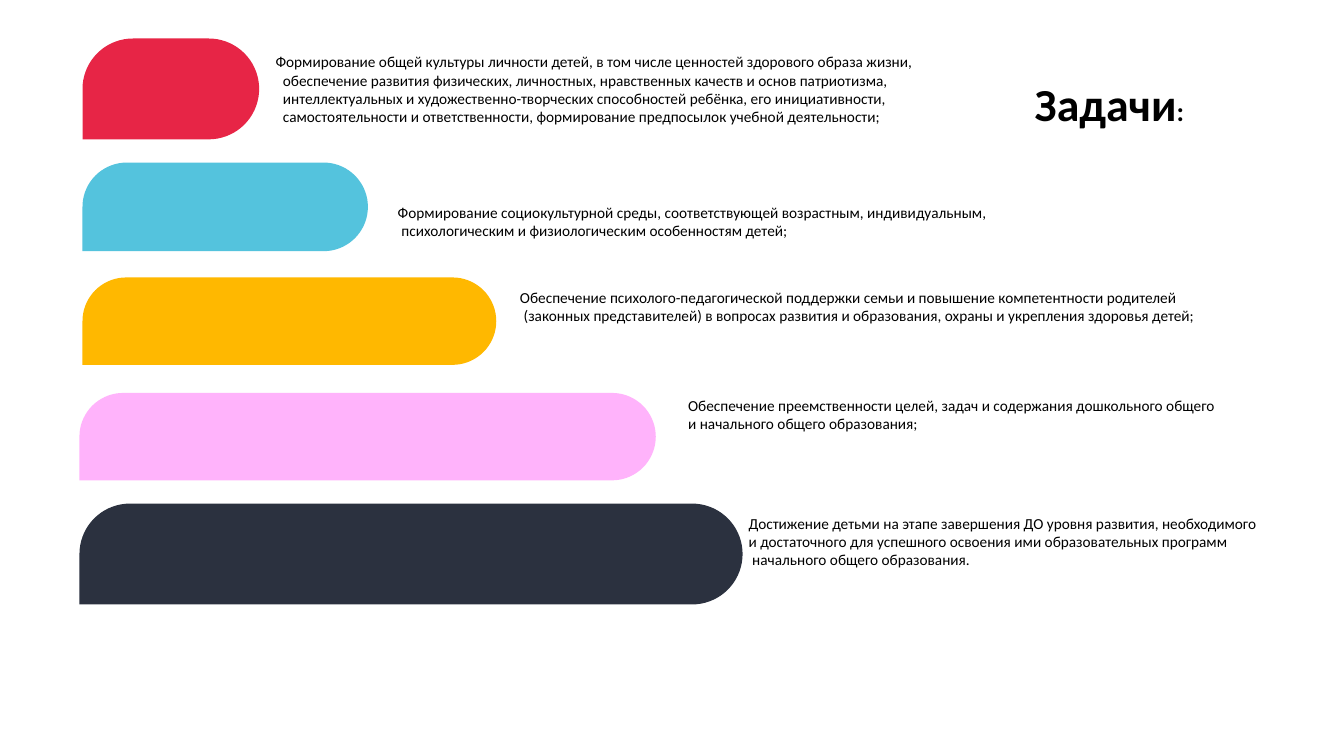
from math import cos, radians, sin

from pptx import Presentation
from pptx.dml.color import RGBColor as RGB
from pptx.enum.text import MSO_ANCHOR as Anchor, MSO_AUTO_SIZE as Fit, PP_ALIGN as Align
from pptx.util import Inches, Pt

FONT = "Calibri"
SPACE = 0.06  # width of one space at 18 pt

# bar box, bar colour, text box, indent of the later paragraphs, paragraphs
TASKS = [
    ((1.35, 0.63, 2.89, 1.65), "E72546", (4.41, 0.81, 12, 1.62), 2 * SPACE, [
        "Формирование общей культуры личности детей, в том числе ценностей здорового образа жизни,",
        "обеспечение развития физических, личностных, нравственных качеств и основ патриотизма,",
        "интеллектуальных и художественно-творческих способностей ребёнка, его инициативности,",
        "самостоятельности и ответственности, формирование предпосылок учебной деятельности;"]),
    ((1.35, 2.66, 4.67, 1.45), "54C3DD", (6.41, 3.27, 10, 1.01), SPACE, [
        "Формирование социокультурной среды, соответствующей возрастным, индивидуальным,",
        "психологическим и физиологическим особенностям детей;"]),
    ((1.35, 4.54, 6.77, 1.43), "FFB800", (8.41, 4.66, 11.36, 1.31), SPACE, [
        "Обеспечение психолого-педагогической поддержки семьи и повышение компетентности родителей",
        "(законных представителей) в вопросах развития и образования, охраны и укрепления здоровья детей;"]),
    ((1.3, 6.43, 9.43, 1.43), "FFB3FB", (11.16, 6.43, 10.31, 1.01), 0, [
        "Обеспечение преемственности целей, задач и содержания дошкольного общего \v"
        "и начального общего образования;"]),
    ((1.3, 8.24, 10.85, 1.65), "2B313F", (12.15, 8.36, 9.6, 1.31), SPACE, [
        "Достижение детьми на этапе завершения ДО уровня развития, необходимого \v"
        "и достаточного для успешного освоения ими образовательных программ",
        "начального общего образования."]),
]


def paint(color, code):
    color.rgb = RGB.from_string(code)


def write(par, text, size=18, bold=False, code="000000"):
    """Add text to a paragraph, with line breaks at each vertical tab."""
    for i, part in enumerate(text.split("\v")):
        if i:
            par.add_line_break()
        run = par.add_run()
        run.text = part
        run.font.name = FONT
        run.font.size = Pt(size)
        run.font.bold = bold
        paint(run.font.color, code)


def draw_bar(slide, box, code):
    """Bar with round ends and a square lower left corner."""
    x, y, w, h = box
    r = h / 2
    arcs = [(x + r, range(180, 271, 5)), (x + w - r, range(270, 451, 5))]
    dots = [(Inches(cx + r * cos(radians(a))), Inches(y + r + r * sin(radians(a))))
            for cx, turn in arcs for a in turn]
    form = slide.shapes.build_freeform(Inches(x), Inches(y + h))
    form.add_line_segments(dots, close=True)
    bar = form.convert_to_shape()
    bar.shadow.inherit = False
    bar.fill.solid()
    paint(bar.fill.fore_color, code)
    bar.line.fill.background()


def draw_text(slide, box, indent, lines):
    """Text beside a bar, indented after its first paragraph."""
    frame = slide.shapes.add_textbox(*map(Inches, box)).text_frame
    frame.word_wrap = True
    for i, line in enumerate(lines):
        par = frame.add_paragraph() if i else frame.paragraphs[0]
        if i:
            par._p.get_or_add_pPr().set("marL", str(Inches(indent)))
        write(par, line)


def draw_title(slide, box):
    title = slide.shapes.title
    title.left, title.top, title.width, title.height = map(Inches, box)
    frame = title.text_frame
    frame.word_wrap = False
    frame.auto_size = Fit.NONE
    frame.vertical_anchor = Anchor.TOP
    par = frame.paragraphs[0]
    par.alignment = Align.LEFT
    write(par, "Задачи", size=54, bold=True)
    write(par, ":", size=32, bold=True)


def main():
    deck = Presentation()
    deck.slide_width, deck.slide_height = Inches(21.99), Inches(12.37)
    slide = deck.slides.add_slide(deck.slide_layouts[5])

    # Title at the upper right
    draw_title(slide, (16.83, 1.18, 2.77, 1.01))

    # Growing bars, each with its task
    for bar, code, box, indent, lines in TASKS:
        draw_bar(slide, bar, code)
        draw_text(slide, box, indent, lines)

    deck.save("out.pptx")


if __name__ == "__main__":
    main()
